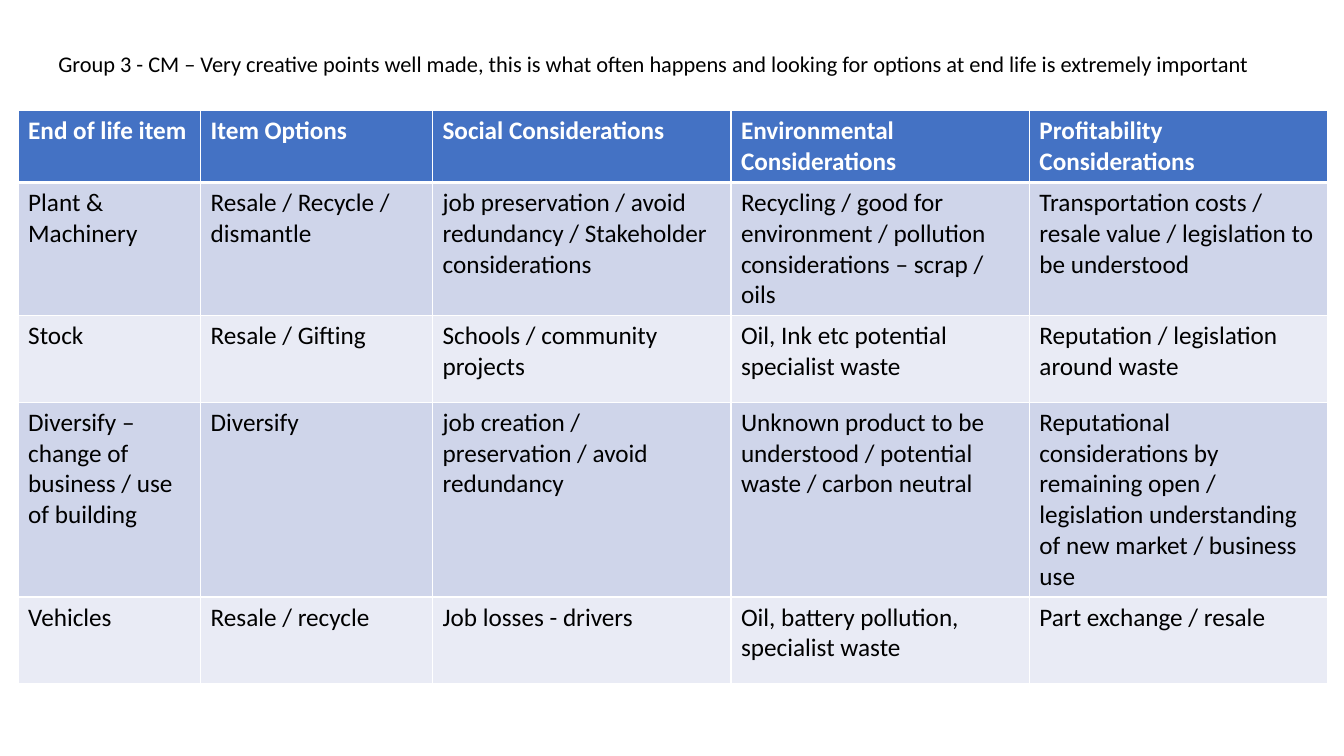
from lxml import etree
from pptx import Presentation
from pptx.dml.color import RGBColor
from pptx.oxml.ns import qn
from pptx.util import Inches, Pt

FONT = "Calibri"
WHITE, BLACK, BLUE = "FFFFFF", "000000", "4472C4"
BANDS = ["E9EBF5", "CFD5EA"]


def style_text(text_frame, size, color, bold=False):
    for paragraph in text_frame.paragraphs:
        for run in paragraph.runs:
            run.font.name = FONT
            run.font.size = Pt(size)
            run.font.bold = bold
            run.font.color.rgb = RGBColor.from_string(color)


def add_border(cell, side, points):
    line = etree.SubElement(cell._tc.get_or_add_tcPr(), qn("a:ln" + side), w=str(Pt(points)))
    fill = etree.SubElement(line, qn("a:solidFill"))
    etree.SubElement(fill, qn("a:srgbClr"), val=WHITE)


prs = Presentation()
prs.slide_width = Inches(13.33)
prs.slide_height = Inches(7.5)
slide = prs.slides.add_slide(prs.slide_layouts[6])

considerations = [
    ["End of life item", "Item Options", "Social Considerations",
     "Environmental Considerations", "Profitability\nConsiderations"],
    ["Plant & Machinery", "Resale / Recycle / dismantle",
     "job preservation / avoid redundancy / Stakeholder considerations",
     "Recycling / good for environment / pollution considerations – scrap / oils",
     "Transportation costs / resale value / legislation to be understood"],
    ["Stock", "Resale / Gifting", "Schools / community projects",
     "Oil, Ink etc potential specialist waste",
     "Reputation / legislation around waste"],
    ["Diversify – change of business / use of building", "Diversify",
     "job creation / preservation / avoid redundancy",
     "Unknown product to be understood / potential waste / carbon neutral",
     "Reputational considerations by remaining open / legislation understanding "
     "of new market / business use"],
    ["Vehicles", "Resale / recycle", "Job losses - drivers",
     "Oil, battery pollution, specialist waste", "Part exchange / resale"],
]
column_widths = [1.81, 2.3, 2.96, 2.96, 2.96]
row_heights = [0.47] + [0.86] * 4

table = slide.shapes.add_table(
    len(row_heights), len(column_widths), Inches(0.18), Inches(1.1),
    Inches(sum(column_widths)), Inches(sum(row_heights))).table
for column, width in zip(table.columns, column_widths):
    column.width = Inches(width)
for row, height in zip(table.rows, row_heights):
    row.height = Inches(height)

for r, entries in enumerate(considerations):
    header = r == 0
    for c, entry in enumerate(entries):
        cell = table.cell(r, c)
        cell.text_frame.text = entry
        style_text(cell.text_frame, 18, WHITE if header else BLACK, header)
        for side in "LRTB":
            under_header = (r, side) in [(0, "B"), (1, "T")]
            add_border(cell, side, 3 if under_header else 1)
        cell.fill.solid()
        cell.fill.fore_color.rgb = RGBColor.from_string(BLUE if header else BANDS[r % 2])

feedback = slide.shapes.add_textbox(Inches(0.48), Inches(0.45), Inches(12.17), Inches(0.37)).text_frame
feedback.word_wrap = True
feedback.text = ("Group 3 - CM – Very creative points well made, this is what often happens "
                 "and looking for options at end life is extremely important")
style_text(feedback, 16, BLACK)

prs.save("out.pptx")
